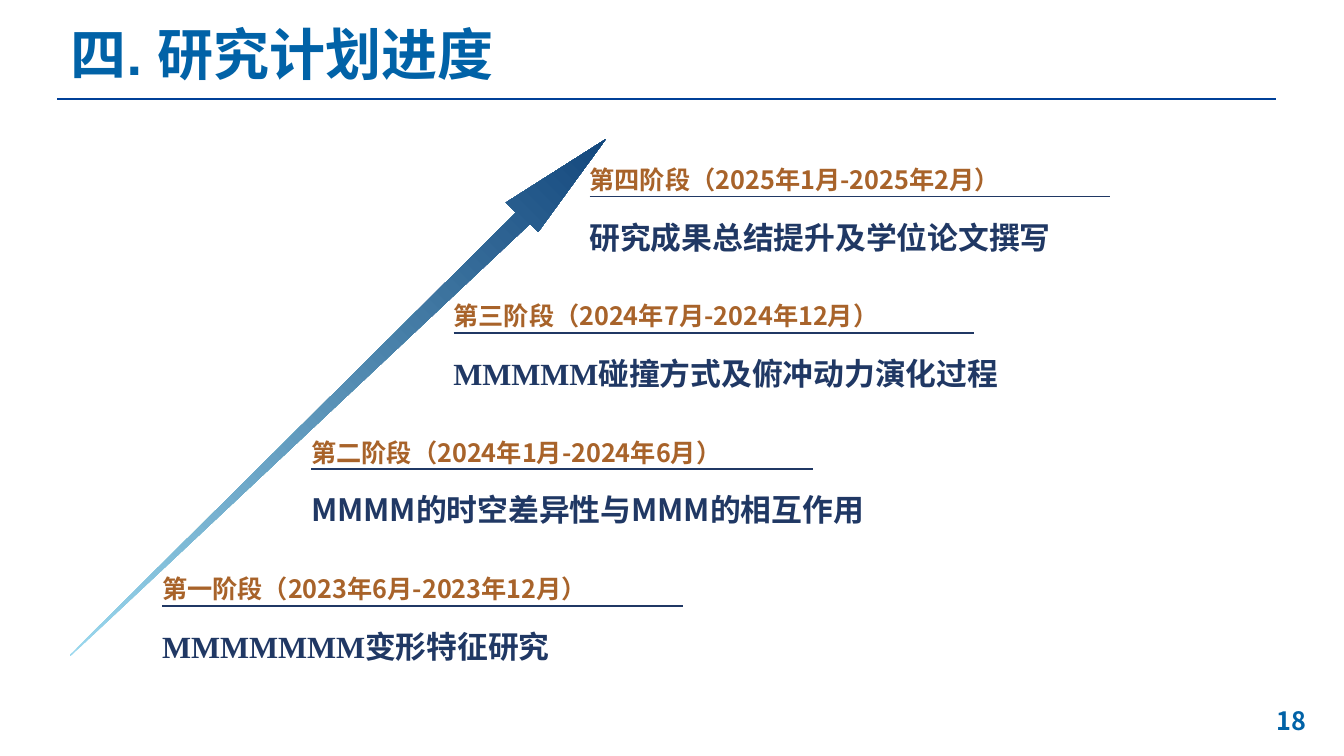
from lxml.etree import SubElement
from pptx import Presentation
from pptx.dml.color import RGBColor
from pptx.enum.shapes import MSO_CONNECTOR
from pptx.enum.text import MSO_ANCHOR, MSO_AUTO_SIZE, PP_ALIGN
from pptx.oxml.ns import qn
from pptx.util import Pt

SANS = "Noto Sans CJK SC"
SERIF = "Times New Roman"
NAVY, BLUE, BRONZE = "203864", "0162A7", "A8632A"
FIRST_TOP, STAGE_STEP = 406, 97.4
STAGES = [
    ("第一阶段（2023年6月-2023年12月）", "MMMMMMM变形特征研究", SERIF, 108.7, 372, 561),
    ("第二阶段（2024年1月-2024年6月）", "MMMM的时空差异性与MMM的相互作用", SANS, 215.3, 358.5, 566),
    ("第三阶段（2024年7月-2024年12月）", "MMMMM碰撞方式及俯冲动力演化过程", SERIF, 316.8, 372, 500),
    ("第四阶段（2025年1月-2025年2月）", "研究成果总结提升及学位论文撰写", SANS, 414, 372, 455),
]
ARROW = [
    (49.7, 468), (368.6, 151.9), (361.4, 144.7), (432.7, 99.4),
    (384.5, 165.6), (378.7, 159.8), (50.4, 468.7),
]


def color(hex_value):
    """Turn a hex string into a colour."""
    return RGBColor.from_string(hex_value)


def style(paragraph, text, size, font, hex_value, align):
    """Fill a paragraph with bold text, with the sans face for Chinese."""
    paragraph.text = text
    paragraph.alignment = align
    paragraph.font.size = Pt(size)
    paragraph.font.bold = True
    paragraph.font.name = font
    paragraph.font.color.rgb = color(hex_value)
    for run in paragraph.runs:
        run.font.name = font
        SubElement(run.font._element, qn("a:ea"), typeface=SANS)


def add_text(shapes, box, text, size, font, hex_value, align=PP_ALIGN.JUSTIFY):
    """Add a one-paragraph text box and return its frame."""
    frame = shapes.add_textbox(*map(Pt, box)).text_frame
    frame.word_wrap = True
    frame.auto_size = MSO_AUTO_SIZE.SHAPE_TO_FIT_TEXT
    style(frame.paragraphs[0], text, size, font, hex_value, align)
    return frame


def add_rule(shapes, left, top, width, hex_value, weight):
    """Draw a flat horizontal line."""
    rule = shapes.add_connector(
        MSO_CONNECTOR.STRAIGHT, Pt(left), Pt(top), Pt(left + width), Pt(top)
    )
    rule.line.color.rgb = color(hex_value)
    rule.line.width = Pt(weight)
    SubElement(rule._element.spPr, qn("a:effectLst"))


def add_title(slide, text):
    """Place and format the title placeholder."""
    title = slide.shapes.title
    title.left, title.top, title.width, title.height = map(Pt, (43.2, 21.6, 522, 38.2))
    frame = title.text_frame
    frame.auto_size = MSO_AUTO_SIZE.NONE
    frame.vertical_anchor = MSO_ANCHOR.MIDDLE
    heading = frame.paragraphs[0]
    style(heading, text, 40, "Arial", BLUE, PP_ALIGN.LEFT)
    heading.line_spacing = 0.9


def add_arrow(shapes):
    """Draw the rising arrow with its gradient."""
    start, *corners = [(Pt(x), Pt(y)) for x, y in ARROW]
    builder = shapes.build_freeform(*start)
    builder.add_line_segments(corners, close=True)
    arrow = builder.convert_to_shape()
    arrow.shadow.inherit = False
    arrow.line.fill.background()
    arrow.fill.gradient()
    arrow.fill.gradient_angle = 45
    for stop, position, hex_value in zip(
        arrow.fill.gradient_stops, (0, 1), ("9BD8EE", "14487D")
    ):
        stop.position = position
        stop.color.rgb = color(hex_value)


def add_stage(slide, top, period, task, task_font, left, rule_width, task_width):
    """Add one stage: period, rule and task, as a group."""
    stage = slide.shapes.add_group_shape().shapes
    add_text(stage, (left, top, rule_width + 11, 29), period, 18, SANS, BRONZE)
    frame = add_text(
        stage, (left, top + 32, task_width, 37.5), task, 22, task_font, NAVY
    )
    frame.paragraphs[0].line_spacing = 1.25
    frame.paragraphs[0].space_before = Pt(5)
    add_rule(stage, left + 7.2, top + 26.6, rule_width, NAVY, 1.25)


def main():
    """Build the research schedule slide."""
    deck = Presentation()
    deck.slide_width, deck.slide_height = Pt(960), Pt(540)
    slide = deck.slides.add_slide(deck.slide_layouts[5])
    add_rule(slide.shapes, 41, 70.6, 870.5, "004098", 1.75)
    add_arrow(slide.shapes)
    add_title(slide, "四. 研究计划进度")
    page = add_text(
        slide.shapes, (724.3, 500.4, 216, 28.8), "18", 18, SANS, BLUE, PP_ALIGN.RIGHT
    )
    page.vertical_anchor = MSO_ANCHOR.MIDDLE
    for index, stage in enumerate(STAGES):
        add_stage(slide, FIRST_TOP - index * STAGE_STEP, *stage)
    deck.save("out.pptx")


if __name__ == "__main__":
    main()
